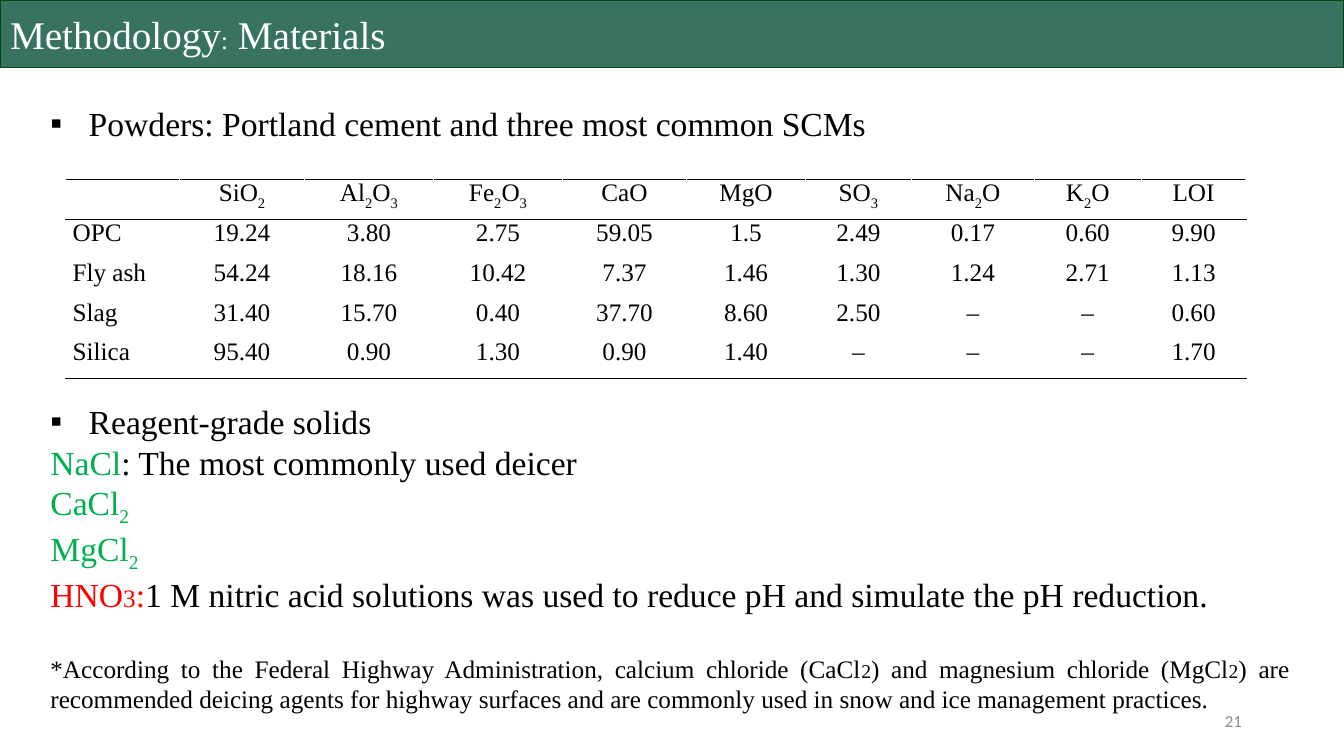
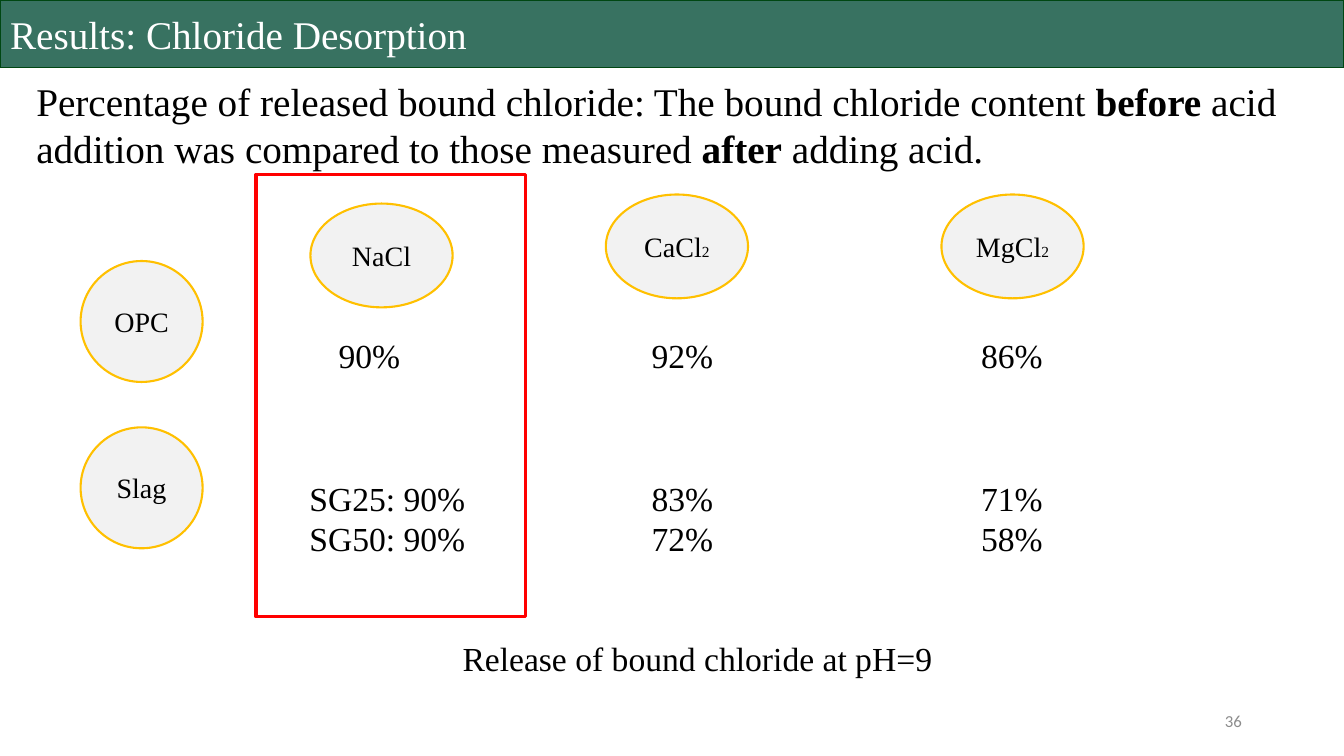
from itertools import groupby

from lxml import etree
from pptx import Presentation
from pptx.dml.color import RGBColor
from pptx.enum.shapes import MSO_SHAPE
from pptx.enum.text import MSO_ANCHOR, MSO_AUTO_SIZE, PP_ALIGN
from pptx.oxml.ns import qn
from pptx.util import Inches, Pt

LEFT, CENTER, RIGHT, JUSTIFY = PP_ALIGN.LEFT, PP_ALIGN.CENTER, PP_ALIGN.RIGHT, PP_ALIGN.JUSTIFY
MIDDLE = MSO_ANCHOR.MIDDLE
NO_FIT = MSO_AUTO_SIZE.NONE
RECTANGLE, CIRCLE = MSO_SHAPE.RECTANGLE, MSO_SHAPE.FLOWCHART_CONNECTOR

color = RGBColor.from_string
BAND, BAND_EDGE = "387261", "004712"
BLACK, WHITE, GRAY, PALE = "000000", "FFFFFF", "8C8C8C", "F2F2F2"
GREEN, RED, GOLD = "00B050", "FF0000", "FFC000"
SERIF, SANS = "Times New Roman", "Calibri"

# The slide is a grid of 100 columns by 100 rows.
WIDTH, HEIGHT = Inches(13.33), Inches(7.5)
COLUMN, ROW = WIDTH / 100, HEIGHT / 100
INSET = Inches(0.1)


def place(left, top, width, height):
    """Turn grid columns and rows into slide lengths."""
    return int(left * COLUMN), int(top * ROW), int(width * COLUMN), int(height * ROW)


def add_run(paragraph, text, size=24, ink=BLACK, bold=False, subscript=False, font=SERIF):
    run = paragraph.add_run()
    run.text = text
    run.font.name = font
    run.font.size = Pt(size)
    run.font.bold = bold
    run.font.color.rgb = color(ink)
    if subscript:
        run.font._element.set("baseline", "-25000")


presentation = Presentation()
presentation.slide_width, presentation.slide_height = WIDTH, HEIGHT
layouts = presentation.slide_layouts
materials = presentation.slides.add_slide(layouts.get_by_name("Two Content"))
results = presentation.slides.add_slide(layouts.get_by_name("Title and Content"))

# Title bands and page numbers
headings = [
    (materials, "21", [("Methodology", 28), (":", 18), (" Materials", 28)]),
    (results, "36", [("Results: Chloride Desorption", 28)]),
]
for slide, number, title_runs in headings:
    title = slide.shapes.title
    title.left, title.top, title.width, title.height = place(0, 0, 100, 8.93)
    title.fill.solid()
    title.fill.fore_color.rgb = color(BAND)
    title.line.color.rgb = color(BAND_EDGE)
    title.line.width = Pt(1)
    title.text_frame.auto_size = NO_FIT
    title.text_frame.vertical_anchor = MIDDLE
    paragraph = title.text_frame.paragraphs[0]
    paragraph.alignment = LEFT
    for text, size in title_runs:
        add_run(paragraph, text, size, WHITE)

    page_number = slide.shapes.add_textbox(*place(70.65, 92.67, 22.5, 5.33)).text_frame
    page_number.word_wrap = True
    page_number.vertical_anchor = MIDDLE
    page_number.paragraphs[0].alignment = RIGHT
    add_run(page_number.paragraphs[0], number, 12, GRAY, font=SANS)

# Body text: each paragraph has a bullet flag, space before and runs
powders = [(True, 0, [("Powders: Portland cement and three most common SCMs", {})])]
solids = [
    (True, 0, [("Reagent-grade solids", {})]),
    (False, 0, [("NaCl", {"ink": GREEN}), (": The most commonly used deicer", {})]),
    (False, 0, [("CaCl", {"ink": GREEN}), ("2", {"ink": GREEN, "subscript": True})]),
    (False, 0, [("MgCl", {"ink": GREEN}), ("2", {"ink": GREEN, "subscript": True})]),
    (False, 0, [
        ("HNO", {"ink": RED}), ("3", {"ink": RED, "size": 18}), (":", {"ink": RED}),
        ("1 M nitric acid solutions was used to reduce pH and simulate the pH reduction.", {}),
    ]),
    (False, 28, [
        ("*According to the Federal Highway Administration, calcium chloride (CaCl", {"size": 18}),
        ("2", {"size": 14}),
        (") and magnesium chloride (MgCl", {"size": 18}),
        ("2", {"size": 14}),
        (") are recommended deicing agents for highway surfaces and are commonly used "
         "in snow and ice management practices.", {"size": 18}),
    ]),
]
statement = [(False, 0, [
    ("Percentage of released bound chloride: The bound chloride content ", {"size": 28}),
    ("before", {"size": 28, "bold": True}),
    (" acid addition was compared to those measured ", {"size": 28}),
    ("after", {"size": 28, "bold": True}),
    (" adding acid.", {"size": 28}),
])]
bodies = [
    (materials.placeholders[1], (3, 12.93, 85.8, 6.67), JUSTIFY, powders),
    (materials.placeholders[2], (3, 52.4, 93.68, 41.73), JUSTIFY, solids),
    (results.placeholders[1], (1.95, 9.6, 96.9, 13.87), LEFT, statement),
]
for body, area, alignment, paragraphs in bodies:
    body.left, body.top, body.width, body.height = place(*area)
    frame = body.text_frame
    frame.auto_size = NO_FIT
    for index, (bulleted, gap, runs) in enumerate(paragraphs):
        paragraph = frame.add_paragraph() if index else frame.paragraphs[0]
        properties = paragraph._p.get_or_add_pPr()
        indent = Inches(0.38) if bulleted else 0
        properties.set("marL", str(indent))
        properties.set("indent", str(-indent))
        if bulleted:
            etree.SubElement(properties, qn("a:buChar"), char="▪")
        else:
            etree.SubElement(properties, qn("a:buNone"))
        paragraph.alignment = alignment
        paragraph.space_before = Pt(gap)
        for text, options in runs:
            add_run(paragraph, text, **options)

# Oxide composition table
oxides = [
    ["", "SiO2", "Al2O3", "Fe2O3", "CaO", "MgO", "SO3", "Na2O", "K2O", "LOI"],
    ["OPC", "19.24", "3.80", "2.75", "59.05", "1.5", "2.49", "0.17", "0.60", "9.90"],
    ["Fly ash", "54.24", "18.16", "10.42", "7.37", "1.46", "1.30", "1.24", "2.71", "1.13"],
    ["Slag", "31.40", "15.70", "0.40", "37.70", "8.60", "2.50", "–", "–", "0.60"],
    ["Silica", "95.40", "0.90", "1.30", "0.90", "1.40", "–", "–", "–", "1.70"],
]
column_shares = [8.48, 9.3, 9.6, 9.6, 9.23, 8.85, 7.88, 9.15, 7.95, 7.8]
row_share = 5.26
ruled_edges = {0: ["a:lnT", "a:lnB"], 1: ["a:lnT"], len(oxides) - 1: ["a:lnB"]}
table = materials.shapes.add_table(
    len(oxides), len(column_shares),
    *place(4.88, 23.73, sum(column_shares), row_share * len(oxides))).table
table.first_row = table.horz_banding = False
for column, share in zip(table.columns, column_shares):
    column.width = int(share * COLUMN)
for row_index, values in enumerate(oxides):
    for column_index, value in enumerate(values):
        cell = table.cell(row_index, column_index)
        cell.margin_left = cell.margin_right = Inches(0.07)
        cell.margin_top = cell.margin_bottom = 0
        for edge in ruled_edges.get(row_index, []):
            border = etree.SubElement(cell._tc.get_or_add_tcPr(), qn(edge), w=str(Pt(1)))
            border_fill = etree.SubElement(border, qn("a:solidFill"))
            etree.SubElement(border_fill, qn("a:srgbClr"), val=BLACK)
        cell.fill.background()
        paragraph = cell.text_frame.paragraphs[0]
        paragraph.alignment = CENTER if column_index else LEFT
        if row_index:
            add_run(paragraph, value, 18)
        else:
            for is_digit, characters in groupby(value, str.isdigit):
                add_run(paragraph, "".join(characters), 18, subscript=is_digit)

# Binder and salt labels
labels = [
    ("OPC", "", (6, 34.53, 9.08, 16)),
    ("Slag", "", (6, 56.53, 9.08, 16)),
    ("NaCl", "", (23.1, 26.93, 10.58, 13.73)),
    ("CaCl", "2", (45.08, 25.73, 10.58, 13.73)),
    ("MgCl", "2", (70.05, 25.73, 10.58, 13.73)),
]
for name, count, area in labels:
    label = results.shapes.add_shape(CIRCLE, *place(*area))
    label.shadow.inherit = False
    label.fill.solid()
    label.fill.fore_color.rgb = color(PALE)
    label.line.color.rgb = color(GOLD)
    label.line.width = Pt(1.5)
    label.text_frame.vertical_anchor = MIDDLE
    paragraph = label.text_frame.paragraphs[0]
    paragraph.alignment = CENTER
    add_run(paragraph, name, 20)
    if count:
        add_run(paragraph, count, 11)

# Released shares, centred under the salts by tab stops, and the caption
tab_centers = [50.78, 75.3]
text_boxes = [
    ((24.45, 43.6, 56.48, 6.67), ["90%\t92%\t86%"]),
    ((22.28, 62.53, 67.8, 12.13), ["SG25: 90%\t83%\t71%", "SG50: 90%\t72%\t58%"]),
    ((33.68, 83.73, 44.93, 6.67), ["Release of bound chloride at pH=9"]),
]
for area, lines in text_boxes:
    frame = results.shapes.add_textbox(*place(*area)).text_frame
    frame.word_wrap = True
    for index, line in enumerate(lines):
        paragraph = frame.add_paragraph() if index else frame.paragraphs[0]
        if "\t" in line:
            tabs = etree.SubElement(paragraph._p.get_or_add_pPr(), qn("a:tabLst"))
            for center in tab_centers:
                position = int((center - area[0]) * COLUMN) - INSET
                etree.SubElement(tabs, qn("a:tab"), pos=str(position), algn="ctr")
        add_run(paragraph, line)

# Frame around the NaCl column
highlight = results.shapes.add_shape(RECTANGLE, *place(19.05, 23.07, 20.03, 58.53))
highlight.shadow.inherit = False
highlight.fill.background()
highlight.line.color.rgb = color(RED)
highlight.line.width = Pt(2.25)

presentation.save("out.pptx")
